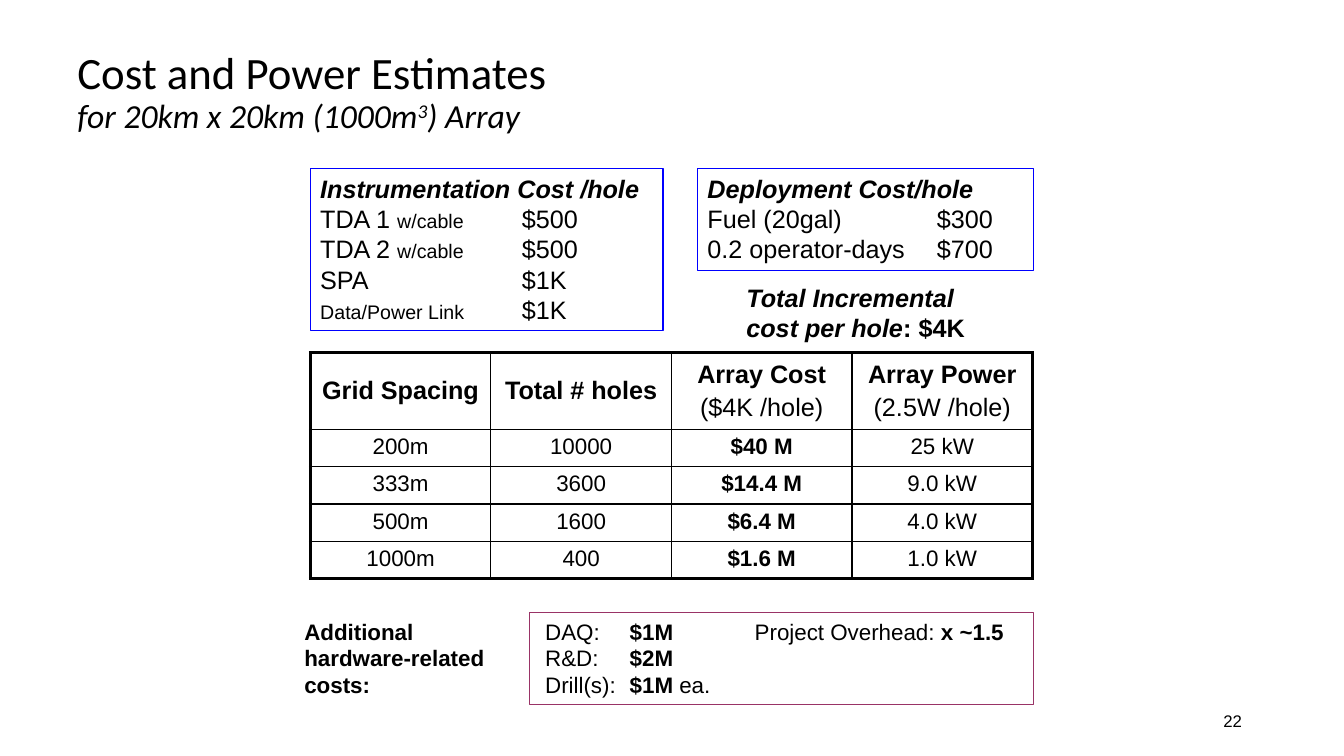
from dataclasses import dataclass

from lxml.etree import SubElement as Sub
from pptx import Presentation
from pptx.dml.color import RGBColor as RGB
from pptx.enum.shapes import MSO_SHAPE as Shape
from pptx.enum.text import MSO_ANCHOR as Anchor, PP_ALIGN as Align
from pptx.oxml.ns import qn
from pptx.util import Cm, Pt


@dataclass(frozen=True)
class Theme:
    head: str = "Calibri"
    body: str = "Arial"
    ink: str = "000000"
    blue: str = "0000FF"
    plum: str = "993366"
    title: int = 32
    sub: int = 24
    large: int = 18
    mid: int = 16
    small: int = 14
    page: int = 12
    thin: float = 1
    thick: float = 2.25


theme = Theme()


def write(frame, lines, size, font=theme.body, align=Align.LEFT, tabs=()):
    """Fill a frame; each line lists (text, style, size) runs, the size being optional.

    Style letters: b bold, i italic, ^ superscript. Tab stops are in cm.
    """
    for n, line in enumerate(lines):
        para = frame.paragraphs[0] if n == 0 else frame.add_paragraph()
        para.alignment = align
        if tabs:
            stops = Sub(para._p.get_or_add_pPr(), qn("a:tabLst"))
            for stop in tabs:
                Sub(stops, qn("a:tab"), pos=str(Cm(stop)), algn="l")
        for text, style, *own in line:
            run = para.add_run()
            run.text = text
            run.font.name = font
            run.font.size = Pt(own[0] if own else size)
            run.font.bold = "b" in style
            run.font.italic = "i" in style
            run.font.color.rgb = RGB.from_string(theme.ink)
            if "^" in style:
                run._r.get_or_add_rPr().set("baseline", "30000")


def box(x, y, w, h, line=None, anchor=Anchor.TOP, wrap=True):
    """Add a text box, or an outlined rectangle if a line colour is given, and return its frame."""
    area = Cm(x), Cm(y), Cm(w), Cm(h)
    if line:
        item = slide.shapes.add_shape(Shape.RECTANGLE, *area)
        item.shadow.inherit = False
        item.fill.background()
        item.line.color.rgb = RGB.from_string(line)
        item.line.width = Pt(0.75)
    else:
        item = slide.shapes.add_textbox(*area)
    frame = item.text_frame
    frame.word_wrap = wrap
    frame.vertical_anchor = anchor
    return frame


deck = Presentation()
deck.slide_width, deck.slide_height = Cm(33.87), Cm(19.05)
slide = deck.slides.add_slide(deck.slide_layouts[6])

# Title and page number
title = box(1.7, 0.76, 30.48, 3.18, anchor=Anchor.MIDDLE)
write(title, [
    [("Cost and Power Estimates", "", theme.title)],
    [("for 20km x 20km (1000m", "i"), ("3", "i^"), (") Array", "i")],
], theme.sub, theme.head)
for para in title.paragraphs:
    para.line_spacing = 0.9

page = box(23.93, 17.65, 7.62, 1.02, anchor=Anchor.MIDDLE)
write(page, [[("22", "")]], theme.page, align=Align.RIGHT)

# Costs per hole
left, right, top = 7.82, 17.58, 4.24
write(box(left, top, 8.89, 4.09, theme.blue), [
    [("Instrumentation Cost /hole", "bi")],
    [("TDA 1 ", ""), ("w/cable", "", theme.small), ("\t$500", "")],
    [("TDA 2 ", ""), ("w/cable", "", theme.small), ("\t$500", "")],
    [("SPA\t$1K", "")],
    [("Data/Power Link", "", theme.small), ("\t$1K", "")],
], theme.large, tabs=[5.08])

write(box(right, top, 8.46, 2.57, theme.blue), [
    [("Deployment Cost/hole", "bi")],
    [("Fuel (20gal)\t$300", "")],
    [("0.2 operator-days\t$700", "")],
], theme.large, tabs=[5.78])

write(box(18.56, 6.99, 6.02, 1.78, wrap=False), [
    [("Total Incremental", "bi")],
    [("cost per hole", "bi"), (": $4K", "b")],
], theme.large)

# Estimates by grid spacing
heads = [["Grid Spacing"], ["Total # holes"],
         ["Array Cost", "($4K /hole)"], ["Array Power", "(2.5W /hole)"]]
rows = [
    ["200m", "10000", "$40 M", "25 kW"],
    ["333m", "3600", "$14.4 M", "9.0 kW"],
    ["500m", "1600", "$6.4 M", "4.0 kW"],
    ["1000m", "400", "$1.6 M", "1.0 kW"],
]
wide, deep = len(heads), len(rows) + 1
grid = slide.shapes.add_table(deep, wide, Cm(left), Cm(8.89), Cm(18.2), Cm(5.69)).table
grid.first_row = grid.horz_banding = False
for col in grid.columns:
    col.width = Cm(4.55)
for r, row in enumerate(grid.rows):
    row.height = Cm(0.94 if r else 1.93)
    for c, cell in enumerate(row.cells):
        if r:
            lines = [[(rows[r - 1][c], "b" if c == 2 else "")]]
        else:
            lines = [[(text, "" if n else "b")] for n, text in enumerate(heads[c])]
            cell.vertical_anchor = Anchor.MIDDLE
        size = theme.mid if r else theme.large
        write(cell.text_frame, lines, size, align=Align.CENTER)
        for para in cell.text_frame.paragraphs[1:]:
            para.space_before = Pt(size * 0.2)
        outer = {"L": c == 0, "R": c == wide - 1, "T": r == 0, "B": r == deep - 1}
        for side, edge in outer.items():
            width = Pt(theme.thick if edge else theme.thin)
            rule = Sub(cell._tc.get_or_add_tcPr(), qn("a:ln" + side), w=str(width))
            Sub(Sub(rule, qn("a:solidFill")), qn("a:srgbClr"), val=theme.ink)
        cell.fill.background()

# Additional costs
low = 15.44
write(box(7.42, low, 5.54, 2.29),
      [[("Additional hardware-related costs:", "b")]], theme.mid)

extra = box(13.34, low, 12.7, 2.31, theme.plum)
extra.margin_left = Cm(0.4)
write(extra, [
    [("DAQ:\t", ""), ("$1M", "b"), ("\tProject Overhead: ", ""), ("x ~1.5", "b")],
    [("R&D:\t", ""), ("$2M", "b")],
    [("Drill(s):\t", ""), ("$1M", "b"), (" ea.", "")],
], theme.mid, tabs=[2.13, 5.28])

deck.save("out.pptx")
